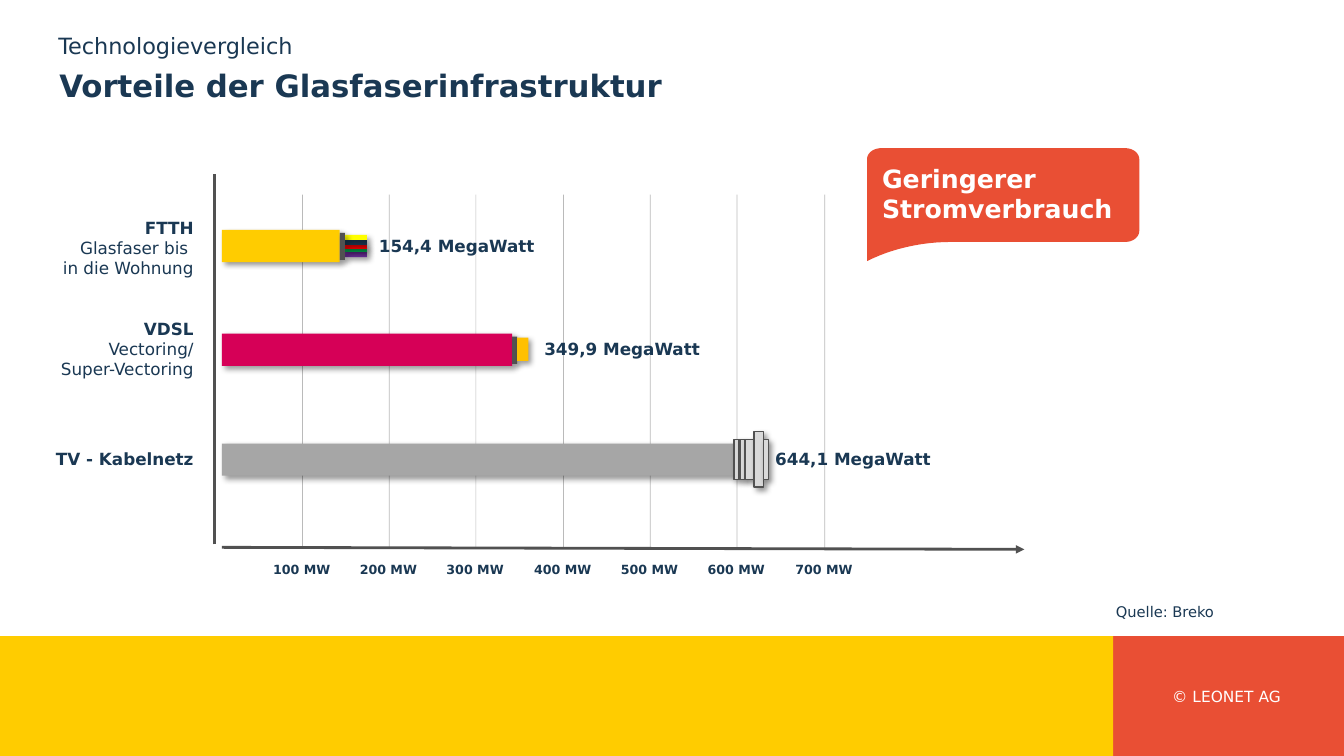
import dataclasses
import typing

import lxml.etree
import pptx
import pptx.dml.color
import pptx.enum.shapes
import pptx.enum.text
import pptx.oxml
import pptx.oxml.ns
import pptx.util

PX = 9144
FACE = "DejaVu Sans"
NAVY, WHITE, RED, YELLOW = "1A3853", "FFFFFF", "E94F34", "FFCC00"
DARK, LIGHT, GREY = "515151", "D9D9D9", "777777"
LEFT = pptx.enum.text.PP_ALIGN.LEFT
RIGHT = pptx.enum.text.PP_ALIGN.RIGHT
CENTER = pptx.enum.text.PP_ALIGN.CENTER
SHADOW = (
    f'<a:outerShdw {pptx.oxml.ns.nsdecls("a")} blurRad="50800" dist="38100" '
    'dir="2700000" algn="tl" rotWithShape="0"><a:srgbClr val="000000">'
    '<a:alpha val="40000"/></a:srgbClr></a:outerShdw>'
)


@dataclasses.dataclass
class Box:
    x: int
    y: int
    w: int
    h: int
    fill: str
    edge: str = ""
    shade: bool = True


@dataclasses.dataclass
class Line:
    x1: int
    y1: int
    x2: int
    y2: int
    color: str = DARK
    width: float = 2
    alpha: int = 100
    arrow: bool = False


@dataclasses.dataclass
class Label:
    x: int
    y: int
    w: int
    h: int
    lines: tuple[str, ...]
    size: float = 12
    bold: int = 1
    align: typing.Any = LEFT
    color: str = NAVY
    wrap: bool = False
    grow: bool = True


def px(value: float) -> int:
    return round(value * PX)


def rgb(code: str) -> pptx.dml.color.RGBColor:
    return pptx.dml.color.RGBColor.from_string(code)


def add_tag(parent: typing.Any, name: str, **attrs: str) -> typing.Any:
    return lxml.etree.SubElement(parent, pptx.oxml.ns.qn(name), attrs)


def draw_box(shapes: typing.Any, box: Box) -> None:
    kind = pptx.enum.shapes.MSO_SHAPE.RECTANGLE
    shape = shapes.add_shape(kind, px(box.x), px(box.y), px(box.w), px(box.h))
    shape.shadow.inherit = False
    shape.fill.solid()
    shape.fill.fore_color.rgb = rgb(box.fill)
    if box.edge:
        shape.line.color.rgb = rgb(box.edge)
        shape.line.width = pptx.util.Pt(1)
    else:
        shape.line.fill.background()
    if box.shade:
        effects = shape._element.spPr.find(pptx.oxml.ns.qn("a:effectLst"))
        effects.append(pptx.oxml.parse_xml(SHADOW))


def draw_line(shapes: typing.Any, line: Line) -> None:
    kind = pptx.enum.shapes.MSO_CONNECTOR.STRAIGHT
    link = shapes.add_connector(kind, px(line.x1), px(line.y1), px(line.x2), px(line.y2))
    link.line.color.rgb = rgb(line.color)
    link.line.width = pptx.util.Pt(line.width)
    props = link._element.spPr
    stroke = props.find(pptx.oxml.ns.qn("a:ln"))
    if line.alpha < 100:
        tint = stroke.find(".//" + pptx.oxml.ns.qn("a:srgbClr"))
        add_tag(tint, "a:alpha", val=str(line.alpha * 1000))
    if line.arrow:
        add_tag(stroke, "a:tailEnd", type="triangle")
    add_tag(props, "a:effectLst")


def draw_label(shapes: typing.Any, label: Label) -> typing.Any:
    frame = shapes.add_textbox(px(label.x), px(label.y), px(label.w), px(label.h)).text_frame
    frame.word_wrap = label.wrap
    if label.grow:
        frame.auto_size = pptx.enum.text.MSO_AUTO_SIZE.SHAPE_TO_FIT_TEXT
    for index, line in enumerate(label.lines):
        para = frame.add_paragraph() if index else frame.paragraphs[0]
        para.text = line
        para.alignment = label.align
        para.font.name = FACE
        para.font.size = pptx.util.Pt(label.size)
        para.font.bold = index < label.bold
        para.font.color.rgb = rgb(label.color)
    return frame


def curve(*knots: tuple[int, int]) -> list[tuple[int, int]]:
    points = []
    for step in range(13):
        t = step / 12
        mix = ((1 - t) ** 3, 3 * t * (1 - t) ** 2, 3 * t * t * (1 - t), t**3)
        x, y = (sum(m * k[axis] for m, k in zip(mix, knots)) for axis in (0, 1))
        points.append((px(x), px(y)))
    return points


def draw_bubble(shapes: typing.Any) -> None:
    points = [
        *curve((1116, 147), (1124, 147), (1130, 152), (1130, 158)),
        *curve((1130, 229), (1130, 235), (1124, 240), (1116, 240)),
        *curve((944, 240), (913, 240), (884, 247), (860, 259)),
        *curve((860, 158), (860, 152), (866, 147), (874, 147)),
    ]
    pen = shapes.build_freeform(*points[0])
    pen.add_line_segments(points[1:], close=True)
    bubble = pen.convert_to_shape()
    bubble.shadow.inherit = False
    bubble.fill.solid()
    bubble.fill.fore_color.rgb = rgb(RED)
    bubble.line.fill.background()


def main() -> None:
    deck = pptx.Presentation()
    deck.slide_width, deck.slide_height = px(1333), px(750)
    shapes = deck.slides.add_slide(deck.slide_layouts[6]).shapes

    draw_box(shapes, Box(1104, 631, 230, 119, RED, shade=False))
    draw_box(shapes, Box(0, 631, 1104, 119, YELLOW, shade=False))
    draw_label(shapes, Label(1151, 677, 131, 29, ("© LEONET AG",), 11, 0, CENTER, WHITE, True))

    title = Label(49, 61, 1150, 51, ("Vorteile der Glasfaserinfrastruktur",), 22, wrap=True, grow=False)
    frame = draw_label(shapes, title)
    frame.vertical_anchor = pptx.enum.text.MSO_ANCHOR.MIDDLE
    frame.paragraphs[0].line_spacing = 0.9
    draw_label(shapes, Label(48, 27, 998, 47, ("Technologievergleich",), 16, 0, wrap=True, grow=False))

    ticks = [(300 + 518 * i // 6, f"{100 * (i + 1)} MW") for i in range(7)]
    for x, _ in ticks:
        draw_line(shapes, Line(x, 544, x, 193, GREY, 0.5, 50))

    stripes = ((250, "7030A0"), (245, "00B050"), (242, "FF0000"), (238, NAVY), (233, "FFFF00"))
    boxes = [
        Box(220, 228, 117, 32, YELLOW),
        *(Box(342, y, 22, 5, color) for y, color in stripes),
        Box(337, 231, 5, 27, DARK),
        Box(220, 331, 288, 32, "D60057"),
        Box(508, 334, 5, 27, DARK),
        Box(513, 335, 11, 23, "FFC000"),
        Box(220, 440, 508, 32, "A6A6A6"),
    ]
    for box in boxes:
        draw_box(shapes, box)

    plug = shapes.add_group_shape().shapes
    for x, w, h in ((728, 5, 40), (734, 5, 40), (739, 9, 40), (748, 9, 55), (757, 5, 40)):
        draw_box(plug, Box(x, 456 - (h + 1) // 2, w, h, LIGHT, DARK))

    draw_line(shapes, Line(220, 543, 1016, 545, arrow=True))
    draw_line(shapes, Line(213, 540, 213, 173))
    draw_bubble(shapes)

    labels = [
        Label(366, 229, 176, 30, ("154,4 MegaWatt",)),
        Label(530, 331, 176, 30, ("349,9 MegaWatt",)),
        Label(759, 440, 176, 30, ("644,1 MegaWatt",)),
        Label(50, 211, 152, 71, ("FTTH", "Glasfaser bis \vin die Wohnung"), align=RIGHT),
        Label(45, 311, 157, 71, ("VDSL", "Vectoring/\vSuper-Vectoring"), align=RIGHT),
        Label(44, 440, 158, 30, ("TV - Kabelnetz",), align=RIGHT),
        *(Label(x - 39, 552, 78, 25, (text,), 9) for x, text in ticks),
        Label(1097, 593, 122, 28, ("Quelle: Breko",), 10.5, 0),
        Label(865, 157, 258, 71, ("Geringerer", "Stromverbrauch"), 18, 2, color=WHITE, wrap=True),
    ]
    for label in labels:
        draw_label(shapes, label)

    deck.save("out.pptx")


if __name__ == "__main__":
    main()
